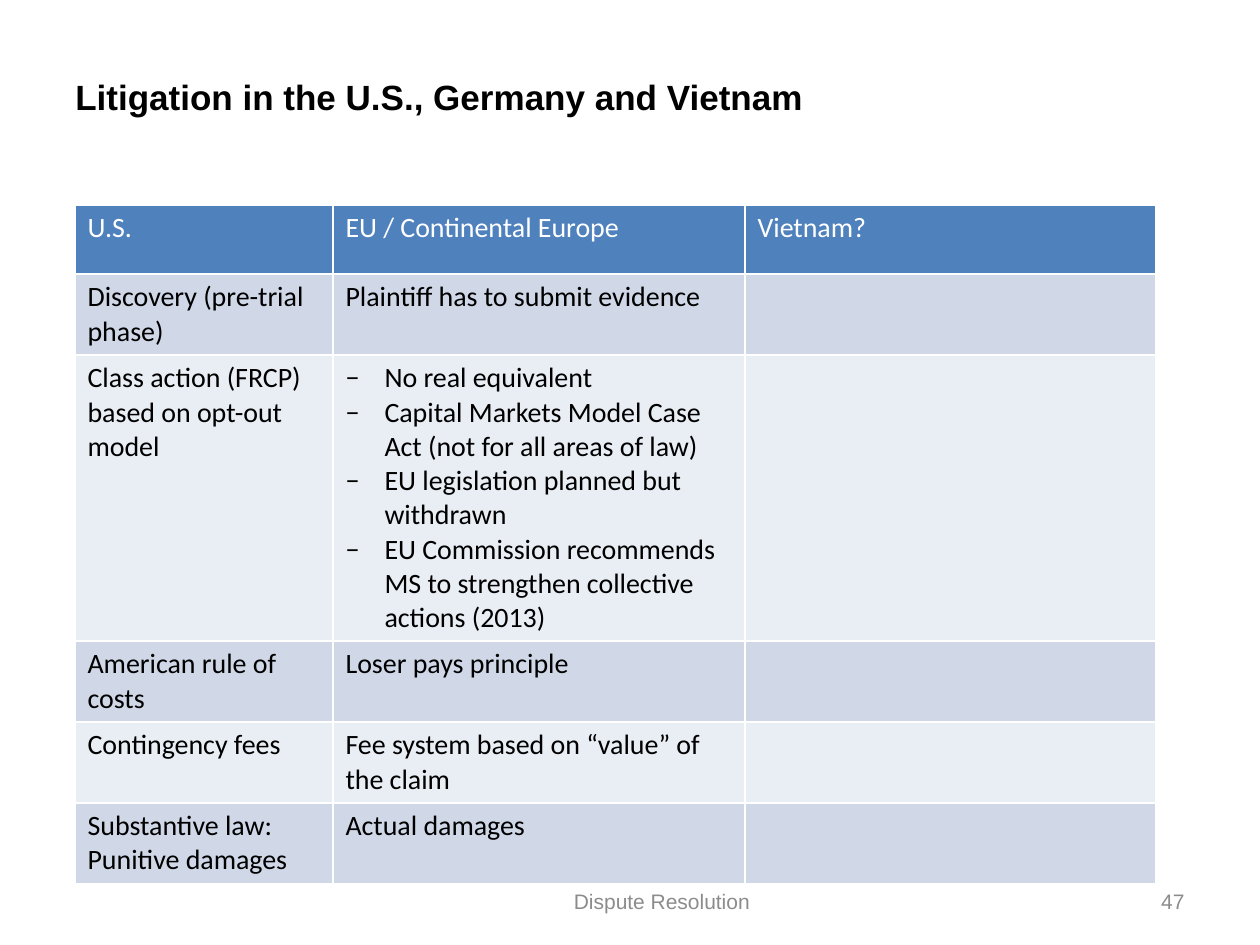
from lxml import etree
from pptx import Presentation
from pptx.dml.color import RGBColor
from pptx.enum.text import MSO_ANCHOR, PP_ALIGN
from pptx.oxml.ns import qn
from pptx.util import Pt

PX = 914400 // 126  # EMU per px, 126 px to the inch
LEFT, CENTER, RIGHT = PP_ALIGN.LEFT, PP_ALIGN.CENTER, PP_ALIGN.RIGHT
MIDDLE = MSO_ANCHOR.MIDDLE

BLACK = RGBColor(0x00, 0x00, 0x00)
WHITE = RGBColor(0xFF, 0xFF, 0xFF)
GRAY = RGBColor(0x8C, 0x8C, 0x8C)
HEADER = RGBColor(0x4F, 0x81, 0xBD)
BANDS = [RGBColor(0xE9, 0xED, 0xF4), RGBColor(0xD0, 0xD8, 0xE8)]

COLUMN_WIDTHS = [258, 412, 411]
ROW_HEIGHTS = [69, 81, 286, 81, 81, 81]
BULLET_INDENT = 39
# A list in a cell becomes a dashed list
ROWS = [
    ["U.S.", "EU / Continental Europe", "Vietnam?"],
    ["Discovery (pre-trial phase)", "Plaintiff has to submit evidence", ""],
    ["Class action (FRCP) based on opt-out model",
     ["No real equivalent",
      "Capital Markets Model Case Act (not for all areas of law)",
      "EU legislation planned but withdrawn",
      "EU Commission recommends MS to strengthen collective actions (2013)"],
     ""],
    ["American rule of costs", "Loser pays principle", ""],
    ["Contingency fees", "Fee system based on “value” of the claim", ""],
    ["Substantive law: Punitive damages", "Actual damages", ""],
]


def emu(*lengths):
    return [length * PX for length in lengths]


def format_runs(p, font, size, color, bold=False):
    for r in p.runs:
        r.font.name = font
        r.font.size = Pt(size)
        r.font.color.rgb = color
        r.font.bold = bold


def add_label(slide, box, text, size, color, align, bold=False):
    tf = slide.shapes.add_textbox(*emu(*box)).text_frame
    tf.word_wrap = True
    tf.vertical_anchor = MIDDLE
    tf.text = text
    p = tf.paragraphs[0]
    p.alignment = align
    format_runs(p, "Arial", size, color, bold)


def add_dash(p):
    pPr = p._p.get_or_add_pPr()
    pPr.set("marL", str(BULLET_INDENT * PX))
    pPr.set("indent", str(-BULLET_INDENT * PX))
    etree.SubElement(pPr, qn("a:buFont"), typeface="Calibri")
    etree.SubElement(pPr, qn("a:buChar"), char="−")


def fill_cell(cell, content, fill, color):
    cell.fill.solid()
    cell.fill.fore_color.rgb = fill
    dashed = isinstance(content, list)
    cell.text_frame.text = "\n".join(content) if dashed else content
    for p in cell.text_frame.paragraphs:
        if dashed:
            add_dash(p)
        format_runs(p, "Calibri", 16, color)


def add_comparison(slide, x, y):
    size = emu(x, y, sum(COLUMN_WIDTHS), sum(ROW_HEIGHTS))
    table = slide.shapes.add_table(len(ROWS), len(COLUMN_WIDTHS), *size).table
    for column, width in zip(table.columns, emu(*COLUMN_WIDTHS)):
        column.width = width
    for row, height in zip(table.rows, emu(*ROW_HEIGHTS)):
        row.height = height
    for i, contents in enumerate(ROWS):
        fill, color = (BANDS[i % 2], BLACK) if i else (HEADER, WHITE)
        for j, content in enumerate(contents):
            fill_cell(table.cell(i, j), content, fill, color)


def add_footer(slide, y, height):
    add_label(slide, (214, y, 896, height), "Dispute Resolution", 12, GRAY, CENTER)
    add_label(slide, (1124, y, 73, height), "47", 12, GRAY, RIGHT)


def main():
    prs = Presentation()
    prs.slide_width, prs.slide_height = emu(1260, 945)
    slide = prs.slides.add_slide(prs.slide_layouts[6])

    # Title
    add_label(slide, (63, 38, 924, 117),
              "Litigation in the U.S., Germany and Vietnam", 20, BLACK, LEFT, True)
    # Comparison table
    add_comparison(slide, 75, 205)
    # Footer and page number
    add_footer(slide, 876, 50)

    prs.save("out.pptx")


if __name__ == "__main__":
    main()
